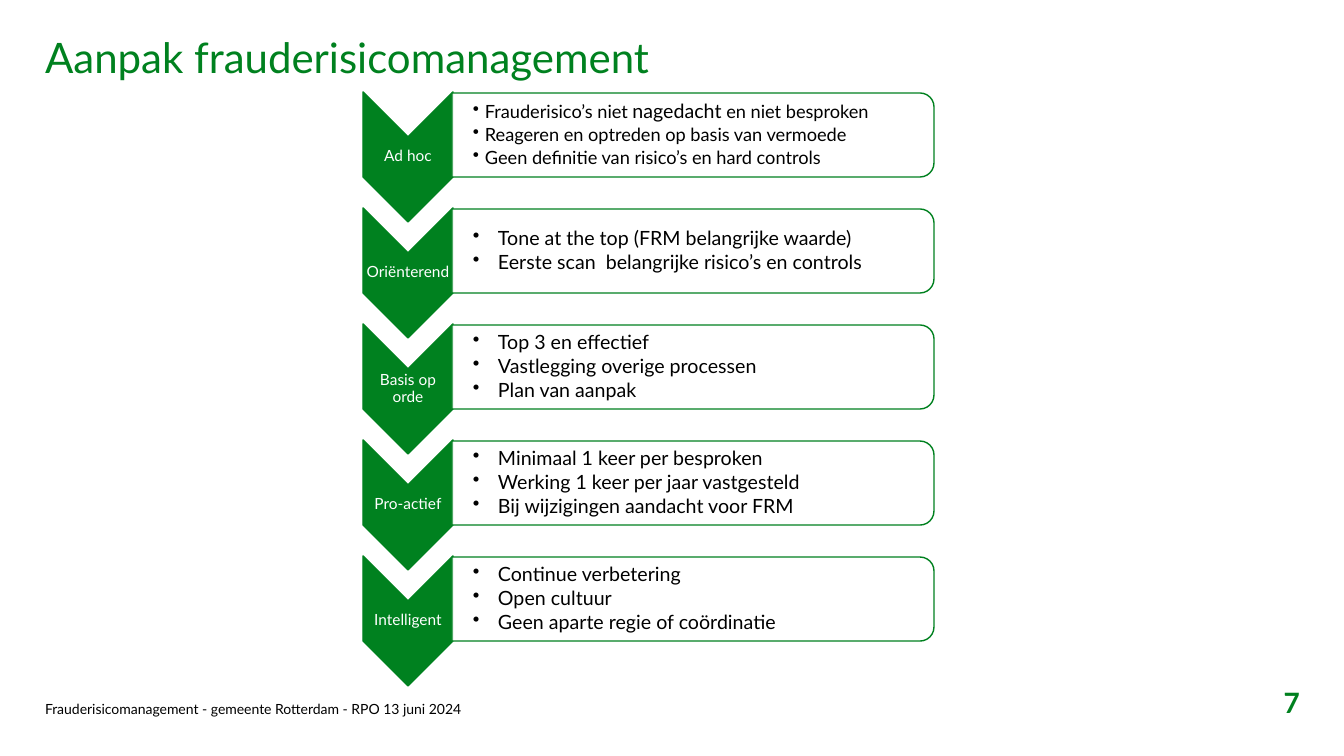
from dataclasses import dataclass

from lxml import etree
from pptx import Presentation
from pptx import util as u
from pptx.dml.color import RGBColor
from pptx.enum import shapes, text
from pptx.oxml.ns import qn

SLIDE_WIDTH, SLIDE_HEIGHT = 1344, 756
EMU_PER_PX = 12192000 / SLIDE_WIDTH
FONT = "Lato"
GREEN, BLACK, WHITE = "00811F", "000000", "FFFFFF"

STAGE_TOP, STAGE_PITCH = 92, 116
CARD_OPACITY = 90


@dataclass
class Box:
    left: int
    top: int
    width: int
    height: int

    def emu(self) -> list[u.Emu]:
        return [px(side) for side in (self.left, self.top, self.width, self.height)]

    def before_quarter_turn(self) -> "Box":
        """Frame that fills this box once it is rotated by 90 degrees."""
        shift = (self.width - self.height) // 2
        return Box(self.left + shift, self.top - shift, self.height, self.width)


@dataclass
class Stage:
    name: str
    points: list[str]
    size: int = 14
    indent: int = 25
    larger_word: str = ""


STAGES = [
    Stage("Ad hoc", ["Frauderisico’s niet nagedacht en niet besproken",
                     "Reageren en optreden op basis van vermoede",
                     "Geen definitie van risico’s en hard controls"],
          size=13, indent=12, larger_word="nagedacht"),
    Stage("Oriënterend", ["Tone at the top (FRM belangrijke waarde)",
                          "Eerste scan  belangrijke risico’s en controls"]),
    Stage("Basis op orde", ["Top 3 en effectief",
                            "Vastlegging overige processen",
                            "Plan van aanpak"]),
    Stage("Pro-actief", ["Minimaal 1 keer per besproken",
                         "Werking 1 keer per jaar vastgesteld",
                         "Bij wijzigingen aandacht voor FRM"]),
    Stage("Intelligent", ["Continue verbetering",
                          "Open cultuur",
                          "Geen aparte regie of coördinatie"]),
]


def px(length: int) -> u.Emu:
    return u.Emu(round(length * EMU_PER_PX))


def rgb(value: str) -> RGBColor:
    return RGBColor.from_string(value)


def style_font(font, size: int, color: str, bold: bool = False) -> None:
    font.name = FONT
    font.size = u.Pt(size)
    font.bold = bold
    font.color.rgb = rgb(color)


def prepare_frame(frame, anchor, inset: int = 0, left_inset: int = 0) -> None:
    frame.word_wrap = True
    frame.auto_size = text.MSO_AUTO_SIZE.NONE
    frame.vertical_anchor = anchor
    frame.margin_left = px(left_inset or inset)
    frame.margin_top = frame.margin_right = frame.margin_bottom = px(inset)


def add_label(slide, box: Box, words: str, size: int, color: str,
              align=text.PP_ALIGN.LEFT, bold: bool = False,
              inset: int = 0, spacing: float = 1.0) -> None:
    frame = slide.shapes.add_textbox(*box.emu()).text_frame
    prepare_frame(frame, text.MSO_ANCHOR.MIDDLE, inset)
    paragraph = frame.paragraphs[0]
    paragraph.text = words
    paragraph.alignment = align
    paragraph.line_spacing = spacing
    style_font(paragraph.runs[0].font, size, color, bold)


def add_turned_shape(slide, kind, box: Box, fill: str):
    shape = slide.shapes.add_shape(kind, *box.before_quarter_turn().emu())
    shape.rotation = 90
    shape.shadow.inherit = False
    shape.fill.solid()
    shape.fill.fore_color.rgb = rgb(fill)
    shape.line.color.rgb = rgb(GREEN)
    shape.line.width = u.Pt(1)
    return shape


def set_opacity(shape, percent: int) -> None:
    color = shape._element.spPr.find(qn("a:solidFill"))[0]
    etree.SubElement(color, qn("a:alpha")).set("val", str(percent * 1000))


def add_bullet(paragraph, indent: int) -> None:
    properties = paragraph._p.get_or_add_pPr()
    properties.set("marL", str(px(indent)))
    properties.set("indent", str(-px(indent)))
    etree.SubElement(properties, qn("a:buChar")).set("char", "•")


def add_points(slide, box: Box, stage: Stage) -> None:
    frame = slide.shapes.add_textbox(*box.emu()).text_frame
    prepare_frame(frame, text.MSO_ANCHOR.MIDDLE, inset=2, left_inset=20)
    for index, point in enumerate(stage.points):
        paragraph = frame.add_paragraph() if index else frame.paragraphs[0]
        paragraph.level = 1
        paragraph.line_spacing = 0.9
        paragraph.space_after = u.Pt(0.15 * stage.size)
        add_bullet(paragraph, stage.indent)
        parts = point.partition(stage.larger_word) if stage.larger_word else [point]
        for part in filter(None, parts):
            run = paragraph.add_run()
            run.text = part
            style_font(run.font, 14 if part == stage.larger_word else stage.size, BLACK)


def add_stage(slide, stage: Stage, top: int) -> None:
    add_turned_shape(slide, shapes.MSO_SHAPE.CHEVRON, Box(363, top, 90, 130), GREEN)
    add_label(slide, Box(363, top + 46, 90, 38), stage.name, 11, WHITE,
              text.PP_ALIGN.CENTER, inset=1, spacing=0.9)
    card = add_turned_shape(slide, shapes.MSO_SHAPE.ROUND_2_SAME_RECTANGLE,
                            Box(452, top + 1, 482, 84), WHITE)
    set_opacity(card, CARD_OPACITY)
    add_points(slide, Box(453, top + 5, 477, 76), stage)


def add_title(slide, words: str) -> None:
    title = slide.shapes.title
    title.left, title.top, title.width, title.height = Box(45, 36, 1254, 46).emu()
    prepare_frame(title.text_frame, text.MSO_ANCHOR.TOP)
    title.text_frame.text = words
    paragraph = title.text_frame.paragraphs[0]
    paragraph.alignment = text.PP_ALIGN.LEFT
    paragraph.line_spacing = 0.92
    style_font(paragraph.runs[0].font, 30, GREEN)


def main() -> None:
    presentation = Presentation()
    presentation.slide_width = px(SLIDE_WIDTH)
    presentation.slide_height = px(SLIDE_HEIGHT)
    slide = presentation.slides.add_slide(presentation.slide_layouts[5])

    # Title, footer and page number
    add_title(slide, "Aanpak frauderisicomanagement")
    add_label(slide, Box(45, 700, 817, 17),
              "Frauderisicomanagement - gemeente Rotterdam - RPO 13 juni 2024", 10, BLACK)
    add_label(slide, Box(1233, 685, 67, 34), "7", 20, GREEN,
              text.PP_ALIGN.RIGHT, bold=True)

    # Maturity stages, one below the other
    for index, stage in enumerate(STAGES):
        add_stage(slide, stage, STAGE_TOP + index * STAGE_PITCH)

    presentation.save("out.pptx")


if __name__ == "__main__":
    main()
